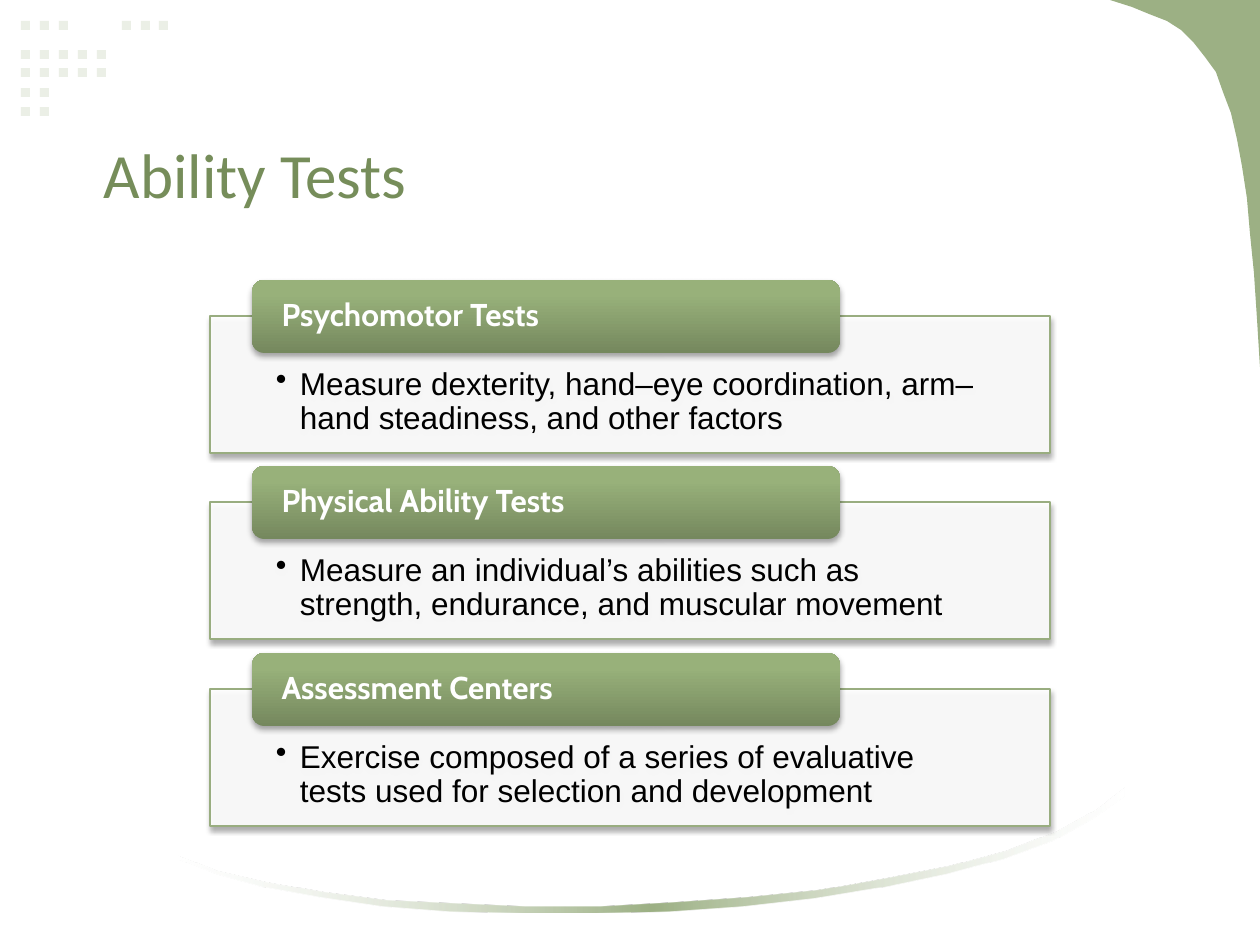
from lxml.etree import SubElement
from pptx import Presentation
from pptx.dml.color import RGBColor
from pptx.enum.shapes import MSO_SHAPE
from pptx.enum.text import MSO_ANCHOR, PP_ALIGN
from pptx.oxml.ns import qn
from pptx.util import Pt

SCALE = 914400 / 126
COLORS = {
    "white": "FFFFFF", "black": "000000", "title": "768D5A", "dot": "EBEFE6",
    "leaf": "9CB084", "border": "99AD80",
    "dark": "75885E", "mid": "98B17A", "light": "99B379",
}
DOT_ROWS = [
    (21, [21, 40, 59, 122, 141, 159]),
    (50, [21, 40, 59, 78, 97]),
    (68, [21, 40, 59, 78, 97]),
    (88, [21, 40]),
    (107, [21, 40]),
]
CORNER = [
    (1110, 0), (1260, 0), (1260, 367), (1257, 318), (1254, 273), (1250, 233),
    (1247, 198), (1242, 166), (1237, 139), (1231, 113), (1223, 92), (1216, 72),
    (1205, 57), (1194, 43), (1181, 30), (1167, 21), (1149, 14), (1132, 7),
]
SWOOSH = [
    (1124, 788), (1124, 796), (1092, 819), (1052, 841), (1002, 859), (945, 874),
    (882, 887), (814, 898), (742, 906), (669, 911), (595, 913), (522, 913),
    (450, 911), (383, 906), (321, 897), (265, 887), (217, 874), (179, 859),
    (179, 856), (218, 871), (267, 882), (324, 892), (387, 900), (455, 903),
    (525, 906), (600, 906), (673, 902), (747, 897), (818, 890), (886, 878),
    (949, 866), (1005, 851), (1055, 832), (1094, 811),
]
TESTS = [
    ("Psychomotor Tests",
     "Measure dexterity, hand–eye coordination, arm–hand steadiness, and other factors"),
    ("Physical Ability Tests",
     "Measure an individual’s abilities such as strength, endurance, and muscular movement"),
    ("Assessment Centers",
     "Exercise composed of a series of evaluative tests used for selection and development"),
]


def px(n):
    return round(n * SCALE)


def rgb(name):
    return RGBColor.from_string(COLORS[name])


def add_color(parent, name, alpha=100):
    clr = SubElement(parent, qn("a:srgbClr"), val=COLORS[name])
    if alpha < 100:
        SubElement(clr, qn("a:alpha"), val=str(alpha * 1000))


class Deck:
    def __init__(self, width, height):
        self.prs = Presentation()
        self.prs.slide_width, self.prs.slide_height = px(width), px(height)
        self.s = self.prs.slides.add_slide(self.prs.slide_layouts[5])

    def style(self, sp, fill):
        sp.shadow.inherit = False
        sp.line.fill.background()
        if isinstance(fill, str):
            sp.fill.solid()
            sp.fill.fore_color.rgb = rgb(fill)

    def shape(self, kind, x, y, w, h, fill=None):
        sp = self.s.shapes.add_shape(kind, px(x), px(y), px(w), px(h))
        self.style(sp, fill)
        return sp

    def outline(self, points, fill=None):
        fb = self.s.shapes.build_freeform(*points[0], scale=SCALE)
        fb.add_line_segments(points[1:], close=True)
        sp = fb.convert_to_shape()
        self.style(sp, fill)
        return sp

    def gradient(self, sp, angle, stops):
        sp.fill.gradient()
        sp.fill.gradient_angle = angle
        gs_lst = sp._element.spPr.find(qn("a:gradFill")).find(qn("a:gsLst"))
        for gs in list(gs_lst):
            gs_lst.remove(gs)
        for pos, name, alpha in stops:
            gs = SubElement(gs_lst, qn("a:gs"), pos=str(pos * 1000))
            add_color(gs, name, alpha)

    def shadow(self, sp):
        effects = sp._element.spPr.find(qn("a:effectLst"))
        outer = SubElement(effects, qn("a:outerShdw"), blurRad="40000",
                           dist="23000", dir="5400000", rotWithShape="0")
        add_color(outer, "black", 35)

    def text(self, sp, text, font, color, anchor, insets, size=18, bold=False):
        tf = sp.text_frame
        tf.word_wrap = True
        tf.vertical_anchor = anchor
        tf.margin_left, tf.margin_top, tf.margin_right, tf.margin_bottom = map(px, insets)
        tf.text = text
        p = tf.paragraphs[0]
        p.alignment = PP_ALIGN.LEFT
        p.line_spacing = 0.9
        f = p.runs[0].font
        f.name, f.size, f.bold = font, Pt(size), bold
        f.color.rgb = rgb(color)
        return p

    def title(self, text, x, y, w, h):
        sp = self.s.shapes.title
        sp.left, sp.top, sp.width, sp.height = map(px, (x, y, w, h))
        p = self.text(sp, text, "Calibri", "title", MSO_ANCHOR.MIDDLE, (13, 6, 13, 6), 36)
        p.line_spacing = 1.0

    def body(self, text, x, y, w, h):
        sp = self.shape(MSO_SHAPE.RECTANGLE, x, y, w, h, "white")
        solid = sp._element.spPr.find(qn("a:solidFill"))
        SubElement(solid[0], qn("a:alpha"), val="90000")
        sp.line.color.rgb = rgb("border")
        sp.line.width = Pt(0.75)
        self.shadow(sp)
        p = self.text(sp, text, "Arial", "black", MSO_ANCHOR.TOP, (66, 52, 66, 18))
        ppr = p._p.get_or_add_pPr()
        ppr.set("marL", str(px(24)))
        ppr.set("indent", str(-px(24)))
        SubElement(ppr, qn("a:buChar"), char="•")

    def header(self, text, x, y, w, h):
        sp = self.shape(MSO_SHAPE.ROUNDED_RECTANGLE, x, y, w, h)
        self.gradient(sp, 90, [(0, "dark", 100), (80, "mid", 100), (100, "light", 100)])
        self.shadow(sp)
        self.text(sp, text, "Cabin", "white", MSO_ANCHOR.MIDDLE, (26, 4, 26, 4), bold=True)


def main():
    deck = Deck(1260, 945)
    for y, columns in DOT_ROWS:
        for x in columns:
            deck.shape(MSO_SHAPE.RECTANGLE, x, y, 9, 9, "dot")
    deck.outline(CORNER, "leaf")
    swoosh = deck.outline(SWOOSH)
    deck.gradient(swoosh, 0, [(0, "white", 30), (50, "leaf", 100), (100, "white", 30)])
    deck.title("Ability Tests", 91, 105, 1084, 136)
    for i, (name, detail) in enumerate(TESTS):
        top = 280 + 373 * i // 2
        deck.body(detail, 210, top + 36, 840, 137)
        deck.header(name, 252, top, 588, 73)
    deck.prs.save("out.pptx")


if __name__ == "__main__":
    main()
